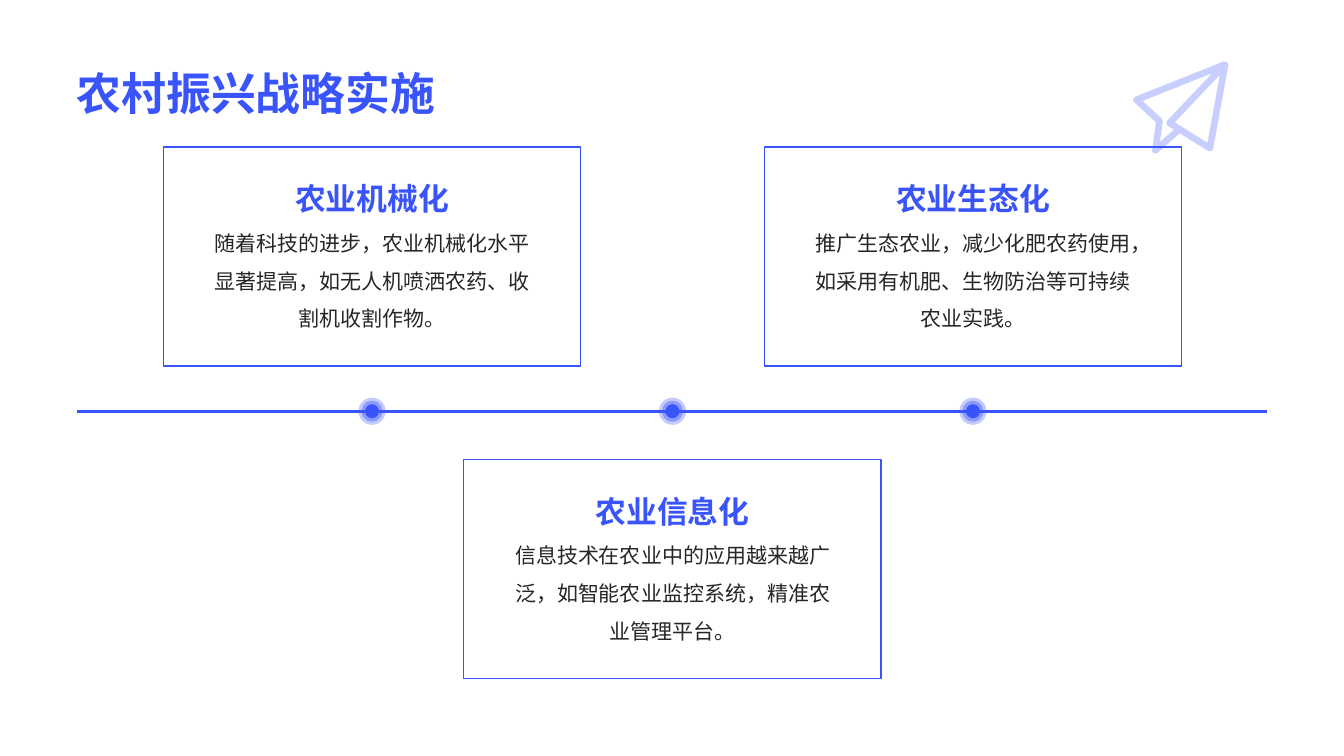
import pptx
import pptx.util
import pptx.dml.color
import pptx.enum.shapes
import pptx.enum.text
import pptx.oxml.ns
import lxml.etree

TITLE = "农村振兴战略实施"
CARDS = [
    ("农业机械化", "随着科技的进步，农业机械化水平显著提高，如无人机喷洒农药、收割机收割作物。", 1.46),
    ("农业信息化", "信息技术在农业中的应用越来越广泛，如智能农业监控系统，精准农业管理平台。", 4.56),
    ("农业生态化", "推广生态农业，减少化肥农药使用，如采用有机肥、生物防治等可持续农业实践。", 1.46),
]
PLANE = [(12.14, 0.65), (11.6, 1.22), (12, 1.47), (12.15, 0.64), (11.27, 0.99),
         (11.5, 1.2), (11.46, 1.49), (11.7, 1.28)]
COLORS = {"blue": "3954FB", "plane": "8898FD", "body": "262626"}
CJK = "Noto Sans CJK SC"
FORMATS = {
    "title": {"name": "Arial", "size": pptx.util.Pt(32), "bold": True},
    "heading": {"name": CJK, "size": pptx.util.Pt(22), "bold": True},
    "body": {"name": CJK, "size": pptx.util.Pt(15), "bold": False},
}
FIRST_CENTER, CENTER_STEP = 3.69, 2.98
CARD_WIDTH, CARD_HEIGHT = 4.14, 2.17
TEXT_WIDTH, HEADING_HEIGHT, BODY_HEIGHT = 3.29, 0.69, 1.48
TIMELINE_LEFT, TIMELINE_RIGHT, TIMELINE_Y = 0.76, 12.57, 4.08
HALO_SIZE, DOT_SIZE = 0.27, 0.14

Inches = pptx.util.Inches
MSO_SHAPE = pptx.enum.shapes.MSO_SHAPE
ANCHOR = pptx.enum.text.MSO_ANCHOR
ALIGN = pptx.enum.text.PP_ALIGN


def set_color(color_format, color, opacity=100):
    color_format.rgb = pptx.dml.color.RGBColor.from_string(COLORS[color])
    if opacity < 100:
        element = color_format._xFill.find(pptx.oxml.ns.qn("a:srgbClr"))
        alpha = lxml.etree.SubElement(element, pptx.oxml.ns.qn("a:alpha"))
        alpha.set("val", str(opacity * 1000))


def style_shape(shape, fill=None, fill_opacity=100, line=None, line_width=1, line_opacity=100):
    shape.shadow.inherit = False
    if fill:
        shape.fill.solid()
        set_color(shape.fill.fore_color, fill, fill_opacity)
    else:
        shape.fill.background()
    if line:
        shape.line.width = pptx.util.Pt(line_width)
        shape.line.fill.solid()
        set_color(shape.line.fill.fore_color, line, line_opacity)
    else:
        shape.line.fill.background()


def add_centered(slide, kind, center_x, center_y, width, height, **style):
    shape = slide.shapes.add_shape(
        kind, Inches(center_x - width / 2), Inches(center_y - height / 2), Inches(width), Inches(height))
    style_shape(shape, **style)


def add_text(slide, text, box, style, color, anchor, align, spacing=1.0):
    frame = slide.shapes.add_textbox(*map(Inches, box)).text_frame
    settings = {"word_wrap": True, "vertical_anchor": anchor, "margin_left": 0,
                "margin_right": 0, "margin_top": 0, "margin_bottom": 0}
    for name, value in settings.items():
        setattr(frame, name, value)
    paragraph = frame.paragraphs[0]
    paragraph.alignment = align
    paragraph.line_spacing = spacing
    run = paragraph.add_run()
    run.text = text
    for name, value in FORMATS[style].items():
        setattr(run.font, name, value)
    run.font.color.rgb = pptx.dml.color.RGBColor.from_string(COLORS[color])
    east_asian = lxml.etree.SubElement(run._r.get_or_add_rPr(), pptx.oxml.ns.qn("a:ea"))
    east_asian.set("typeface", CJK)


def add_plane(slide):
    points = [(Inches(x), Inches(y)) for x, y in PLANE]
    builder = slide.shapes.build_freeform(*points[0])
    builder.add_line_segments(points[1:], close=False)
    plane = builder.convert_to_shape()
    style_shape(plane, line="plane", line_width=4.75, line_opacity=46)
    outline = plane._element.spPr.find(pptx.oxml.ns.qn("a:ln"))
    outline.set("cap", "rnd")
    lxml.etree.SubElement(outline, pptx.oxml.ns.qn("a:round"))


def add_timeline(slide):
    timeline = slide.shapes.add_connector(
        pptx.enum.shapes.MSO_CONNECTOR.STRAIGHT, Inches(TIMELINE_LEFT), Inches(TIMELINE_Y),
        Inches(TIMELINE_RIGHT), Inches(TIMELINE_Y))
    timeline.line.width = pptx.util.Pt(2)
    timeline.line.fill.solid()
    set_color(timeline.line.fill.fore_color, "blue")
    lxml.etree.SubElement(timeline._element.spPr, pptx.oxml.ns.qn("a:effectLst"))


def add_card(slide, center, heading, body, top):
    add_centered(slide, MSO_SHAPE.RECTANGLE, center, top + CARD_HEIGHT / 2,
                 CARD_WIDTH, CARD_HEIGHT, line="blue")
    add_centered(slide, MSO_SHAPE.OVAL, center, TIMELINE_Y, HALO_SIZE, HALO_SIZE,
                 fill="blue", fill_opacity=30)
    add_centered(slide, MSO_SHAPE.OVAL, center, TIMELINE_Y, DOT_SIZE, DOT_SIZE,
                 fill="blue", line="blue", line_width=5, line_opacity=40)
    left = center - TEXT_WIDTH / 2
    add_text(slide, body, (left, top + HEADING_HEIGHT + 0.01, TEXT_WIDTH, BODY_HEIGHT),
             "body", "body", ANCHOR.TOP, ALIGN.CENTER, 1.5)
    add_text(slide, heading, (left, top, TEXT_WIDTH, HEADING_HEIGHT),
             "heading", "blue", ANCHOR.BOTTOM, ALIGN.CENTER)


def main():
    """Build the rural revitalisation timeline slide."""
    presentation = pptx.Presentation()
    presentation.slide_width = Inches(13.33)
    presentation.slide_height = Inches(7.5)
    slide = presentation.slides.add_slide(presentation.slide_layouts[6])
    add_plane(slide)
    add_text(slide, TITLE, (0.76, 0.39, 11.81, 0.79), "title", "blue", ANCHOR.BOTTOM, ALIGN.LEFT)
    add_timeline(slide)
    for index, (heading, body, top) in enumerate(CARDS):
        add_card(slide, FIRST_CENTER + index * CENTER_STEP, heading, body, top)
    presentation.save("out.pptx")


if __name__ == "__main__":
    main()
